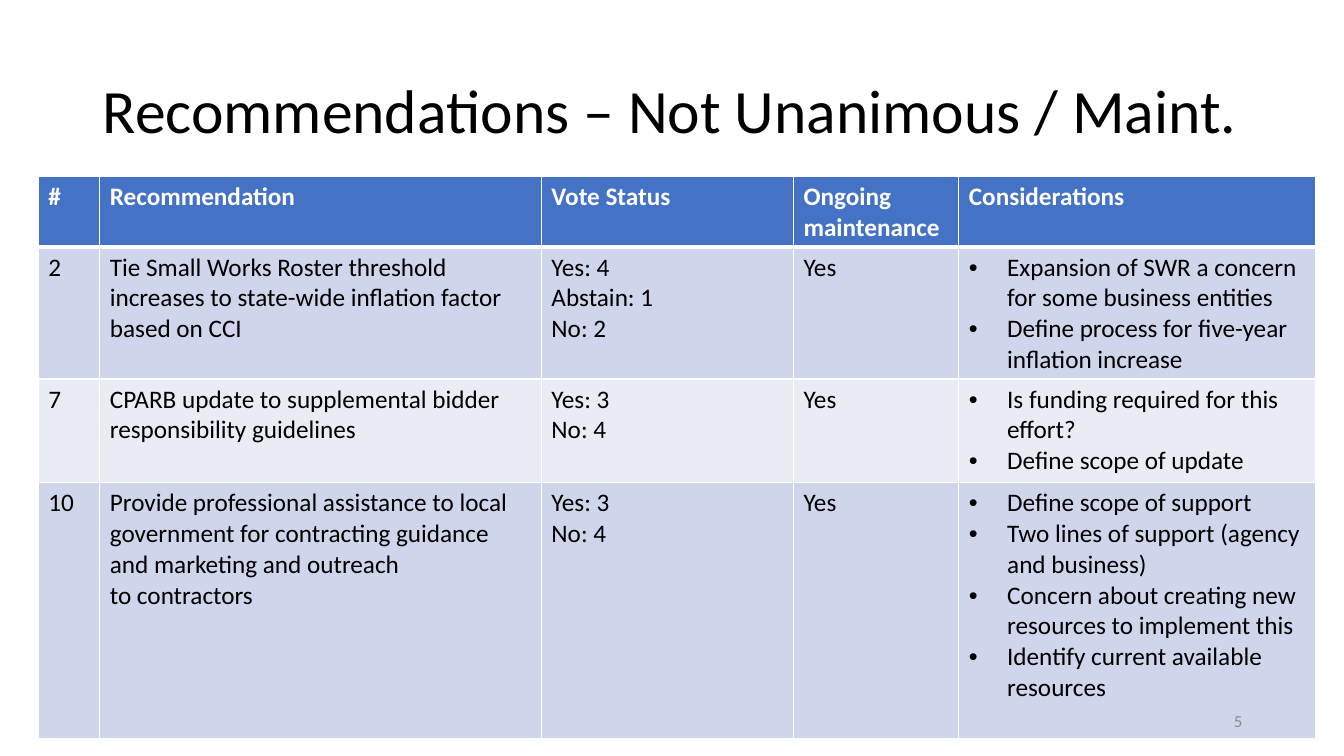
"""Build the slide of non-unanimous recommendations with ongoing maintenance."""
from dataclasses import dataclass

from lxml import etree
from pptx import Presentation
from pptx.dml.color import RGBColor
from pptx.enum.text import MSO_ANCHOR, PP_ALIGN
from pptx.oxml.ns import qn
from pptx.slide import Slide
from pptx.table import _Cell
from pptx.text.text import TextFrame, _Paragraph
from pptx.util import Inches, Pt

LEFT, RIGHT = PP_ALIGN.LEFT, PP_ALIGN.RIGHT
MIDDLE = MSO_ANCHOR.MIDDLE
FONT = "Calibri"
BLACK, WHITE, GRAY = "000000", "FFFFFF", "8C8C8C"
HEADER_FILL = "4472C4"
BAND_FILLS = ("CFD5EA", "E9EBF5")
BULLET_INDENT = 0.38
COL_WIDTHS = (0.61, 4.38, 2.5, 1.64, 3.54)
ROW_HEIGHTS = (0.7, 1.31, 1.03, 2.54)
HEADERS = ("#", "Recommendation", "Vote Status", "Ongoing maintenance", "Considerations")


@dataclass(frozen=True)
class Recommendation:
    number: str
    text: tuple[str, ...]
    votes: tuple[str, ...]
    maintenance: str
    considerations: tuple[str, ...]


@dataclass(frozen=True)
class Label:
    text: str
    box: tuple[float, float, float, float]
    size: float
    color: str
    align: PP_ALIGN
    spacing: float


RECOMMENDATIONS = (
    Recommendation(
        "2",
        ("Tie Small Works Roster threshold increases to state-wide inflation factor based on CCI",),
        ("Yes: 4", "Abstain: 1", "No: 2"),
        "Yes",
        ("Expansion of SWR a concern for some business entities",
         "Define process for five-year inflation increase"),
    ),
    Recommendation(
        "7",
        ("CPARB update to supplemental bidder responsibility guidelines",),
        ("Yes: 3", "No: 4"),
        "Yes",
        ("Is funding required for this effort?", "Define scope of update"),
    ),
    Recommendation(
        "10",
        ("Provide professional assistance to local government for contracting guidance "
         "and marketing and outreach",
         "to contractors"),
        ("Yes: 3", "No: 4"),
        "Yes",
        ("Define scope of support",
         "Two lines of support (agency and business)",
         "Concern about creating new resources to implement this",
         "Identify current available resources"),
    ),
)
TITLE = Label("Recommendations – Not Unanimous / Maint.", (0.92, 0.4, 11.5, 1.45),
              44, BLACK, LEFT, 0.9)
PAGE_NUMBER = Label("5", (9.42, 6.95, 3, 0.4), 12, GRAY, RIGHT, 1.0)


def rgb(color: str) -> RGBColor:
    return RGBColor.from_string(color)


def add_run(p: _Paragraph, text: str, size: float, color: str, bold: bool = False) -> None:
    r = p.add_run()
    r.text = text
    r.font.name = FONT
    r.font.size = Pt(size)
    r.font.bold = bold
    r.font.color.rgb = rgb(color)


def add_bullet(p: _Paragraph) -> None:
    props = p._p.get_or_add_pPr()
    props.set("marL", str(Inches(BULLET_INDENT)))
    props.set("indent", str(-Inches(BULLET_INDENT)))
    etree.SubElement(props, qn("a:buFont"), typeface="Arial")
    etree.SubElement(props, qn("a:buChar"), char="•")


def fill_text(tf: TextFrame, lines: tuple[str, ...], color: str,
              bold: bool = False, bulleted: bool = False) -> None:
    for i, line in enumerate(lines):
        p = tf.add_paragraph() if i else tf.paragraphs[0]
        if bulleted:
            add_bullet(p)
        add_run(p, line, 18, color, bold)


def style_cell(cell: _Cell, fill: str, top: float, bottom: float) -> None:
    props = cell._tc.get_or_add_tcPr()
    for side, width in (("L", 1), ("R", 1), ("T", top), ("B", bottom)):
        ln = etree.SubElement(props, qn(f"a:ln{side}"), w=str(Pt(width)))
        solid = etree.SubElement(ln, qn("a:solidFill"))
        etree.SubElement(solid, qn("a:srgbClr"), val=WHITE)
    cell.fill.solid()
    cell.fill.fore_color.rgb = rgb(fill)


def add_label(s: Slide, label: Label) -> None:
    sp = s.shapes.add_textbox(*map(Inches, label.box))
    tf = sp.text_frame
    tf.word_wrap = True
    tf.vertical_anchor = MIDDLE
    p = tf.paragraphs[0]
    p.alignment = label.align
    p.line_spacing = label.spacing
    add_run(p, label.text, label.size, label.color)


def add_recommendations(s: Slide) -> None:
    sp = s.shapes.add_table(len(ROW_HEIGHTS), len(COL_WIDTHS), Inches(0.38), Inches(1.75),
                            Inches(sum(COL_WIDTHS)), Inches(sum(ROW_HEIGHTS)))
    table = sp.table
    for column, width in zip(table.columns, COL_WIDTHS):
        column.width = Inches(width)
    for row, height in zip(table.rows, ROW_HEIGHTS):
        row.height = Inches(height)
    for cell, header in zip(table.rows[0].cells, HEADERS):
        fill_text(cell.text_frame, (header,), WHITE, bold=True)
        style_cell(cell, HEADER_FILL, top=1, bottom=3)
    for i, rec in enumerate(RECOMMENDATIONS):
        contents = ((rec.number,), rec.text, rec.votes, (rec.maintenance,), rec.considerations)
        for cell, lines in zip(table.rows[i + 1].cells, contents):
            fill_text(cell.text_frame, lines, BLACK, bulleted=lines is rec.considerations)
            style_cell(cell, BAND_FILLS[i % 2], top=1 if i else 3, bottom=1)


def main() -> None:
    prs = Presentation()
    prs.slide_width, prs.slide_height = Inches(13.33), Inches(7.5)
    s = prs.slides.add_slide(prs.slide_layouts[6])
    add_label(s, TITLE)
    add_recommendations(s)
    add_label(s, PAGE_NUMBER)
    prs.save("out.pptx")


if __name__ == "__main__":
    main()
